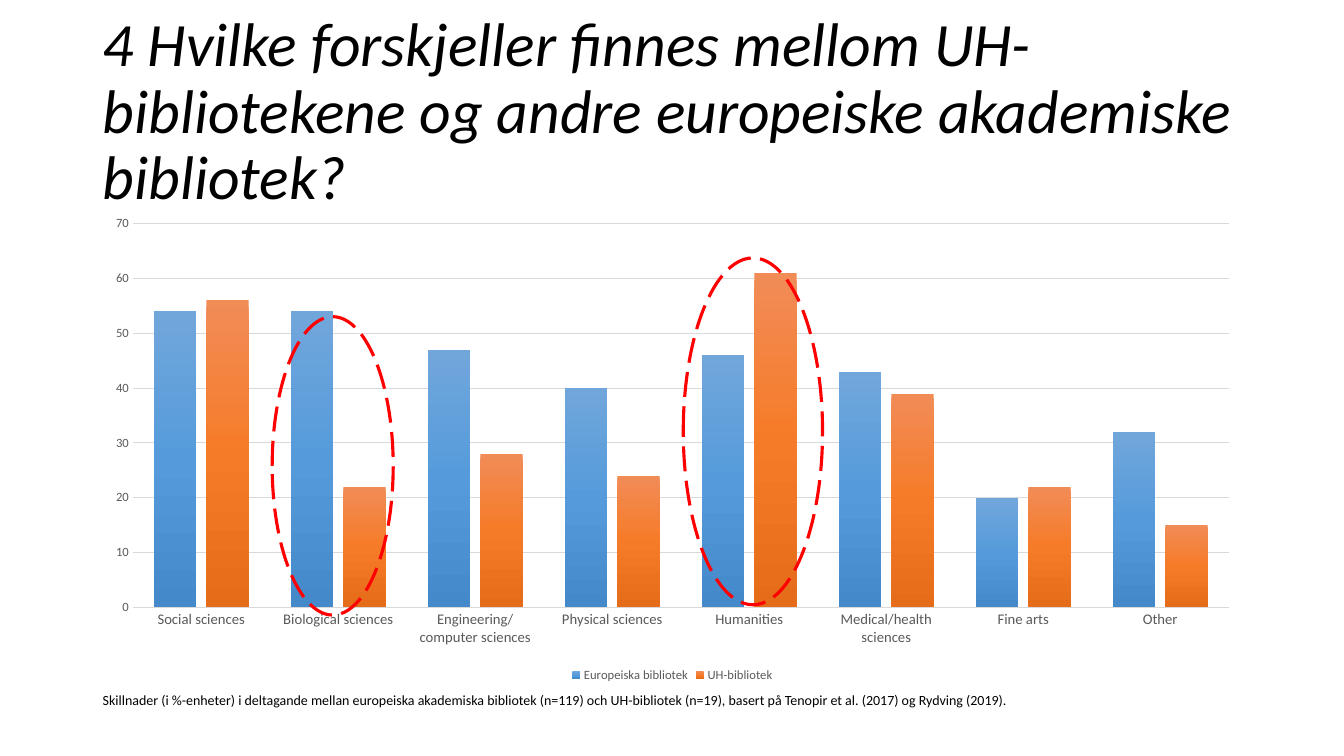
"""Build a slide comparing participation by discipline in European and UH libraries."""
import copy

import pptx
import pptx.chart.data
import pptx.dml.color
import pptx.enum.chart
import pptx.enum.dml
import pptx.enum.shapes
import pptx.enum.text
import pptx.util

Cm = pptx.util.Cm
Pt = pptx.util.Pt
RGBColor = pptx.dml.color.RGBColor

BLACK = RGBColor(0x00, 0x00, 0x00)
GREY = RGBColor(0x59, 0x59, 0x59)
LIGHT_GREY = RGBColor(0xD9, 0xD9, 0xD9)
RED = RGBColor(0xFF, 0x00, 0x00)
BLUES = (RGBColor(0x71, 0xA6, 0xDB), RGBColor(0x55, 0x9B, 0xDB), RGBColor(0x44, 0x8A, 0xCA))
ORANGES = (RGBColor(0xF1, 0x8C, 0x57), RGBColor(0xF6, 0x7B, 0x28), RGBColor(0xE5, 0x6C, 0x19))
FONT = "Calibri"

QUESTION = "4 Hvilke forskjeller finnes mellom UH-bibliotekene og andre europeiske akademiske bibliotek?"
CAPTION = (
    "Skillnader (i %-enheter) i deltagande mellan europeiska akademiska bibliotek (n=119) "
    "och UH-bibliotek (n=19), basert på Tenopir et al. (2017) og Rydving (2019)."
)
DISCIPLINES = [
    "Social sciences", "Biological sciences", "Engineering/computer sciences",
    "Physical sciences", "Humanities", "Medical/health sciences", "Fine arts", "Other",
]
LIBRARIES = [
    ("Europeiska bibliotek", (54, 54, 47, 40, 46, 43, 20, 32), BLUES),
    ("UH-bibliotek", (56, 22, 28, 24, 61, 39, 22, 15), ORANGES),
]
HIGHLIGHTS = [(6.86, 7.98, 3.05, 7.52), (17.22, 6.5, 3.51, 8.74)]
LEFT = 2.34


def style_font(font, size, color):
    font.name = FONT
    font.size = Pt(size)
    font.color.rgb = color


def add_text(slide, text, box, size, wrap):
    frame = slide.shapes.add_textbox(*map(Cm, box)).text_frame
    frame.word_wrap = wrap
    frame.vertical_anchor = pptx.enum.text.MSO_ANCHOR.MIDDLE
    paragraph = frame.paragraphs[0]
    paragraph.text = text
    style_font(paragraph.font, size, BLACK)
    return paragraph


def fill_gradient(series, colors):
    fill = series.format.fill
    fill.gradient()
    fill.gradient_angle = 270
    stop_list = series._element.xpath(".//a:gsLst")[0]
    stop_list.insert(1, copy.deepcopy(stop_list[0]))
    for stop, position, color in zip(fill.gradient_stops, (0, 0.5, 1), colors):
        stop.position = position
        stop.color.rgb = color


def style_axis(axis, size):
    axis.major_tick_mark = pptx.enum.chart.XL_TICK_MARK.NONE
    axis.minor_tick_mark = pptx.enum.chart.XL_TICK_MARK.NONE
    style_font(axis.tick_labels.font, size, GREY)


def add_participation_chart(slide):
    participation = pptx.chart.data.CategoryChartData()
    participation.categories = DISCIPLINES
    for library, values, _ in LIBRARIES:
        participation.add_series(library, values)
    chart = slide.shapes.add_chart(
        pptx.enum.chart.XL_CHART_TYPE.COLUMN_CLUSTERED,
        Cm(LEFT), Cm(5.21), Cm(29.21), Cm(12.09), participation,
    ).chart
    style_font(chart.font, 10, BLACK)
    chart.has_title = False

    columns = chart.plots[0]
    columns.gap_width = 100
    columns.overlap = -24
    columns.vary_by_categories = False
    for series, (_, _, colors) in zip(columns.series, LIBRARIES):
        fill_gradient(series, colors)

    disciplines = chart.category_axis
    style_axis(disciplines, 10.5)
    disciplines.format.line.color.rgb = LIGHT_GREY
    disciplines.format.line.width = Pt(1)

    percent = chart.value_axis
    style_axis(percent, 9)
    percent.minimum_scale, percent.maximum_scale, percent.major_unit = 0, 70, 10
    percent.format.line.fill.background()
    percent.major_gridlines.format.line.color.rgb = LIGHT_GREY
    percent.major_gridlines.format.line.width = Pt(0.75)

    chart.has_legend = True
    chart.legend.position = pptx.enum.chart.XL_LEGEND_POSITION.BOTTOM
    chart.legend.include_in_layout = False
    style_font(chart.legend.font, 9, GREY)


def add_highlight(slide, box):
    ring = slide.shapes.add_shape(pptx.enum.shapes.MSO_SHAPE.OVAL, *map(Cm, box))
    ring.shadow.inherit = False
    ring.fill.background()
    ring.line.color.rgb = RED
    ring.line.width = Pt(2.25)
    ring.line.dash_style = pptx.enum.dml.MSO_LINE.LONG_DASH


def main():
    deck = pptx.Presentation()
    deck.slide_width, deck.slide_height = Cm(33.87), Cm(19.05)
    slide = deck.slides.add_slide(deck.slide_layouts[6])
    question = add_text(slide, QUESTION, (LEFT, 1.02, 30.53, 3.68), 44, True)
    question.font.italic = True
    question.line_spacing = 0.9
    add_participation_chart(slide)
    add_text(slide, CAPTION, (LEFT, 17.3, 23.65, 0.69), 10, False)
    for box in HIGHLIGHTS:
        add_highlight(slide, box)
    deck.save("out.pptx")


if __name__ == "__main__":
    main()
